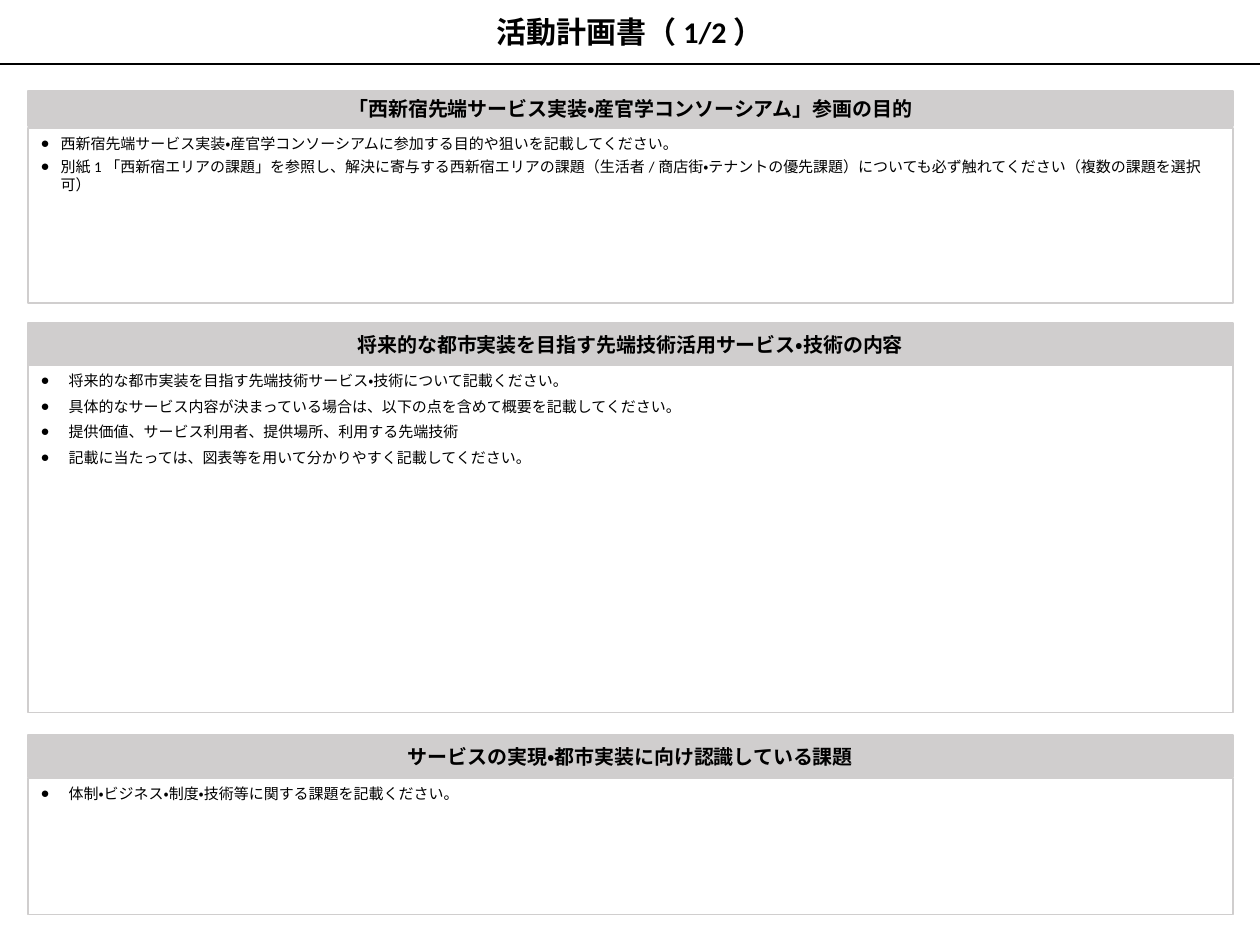
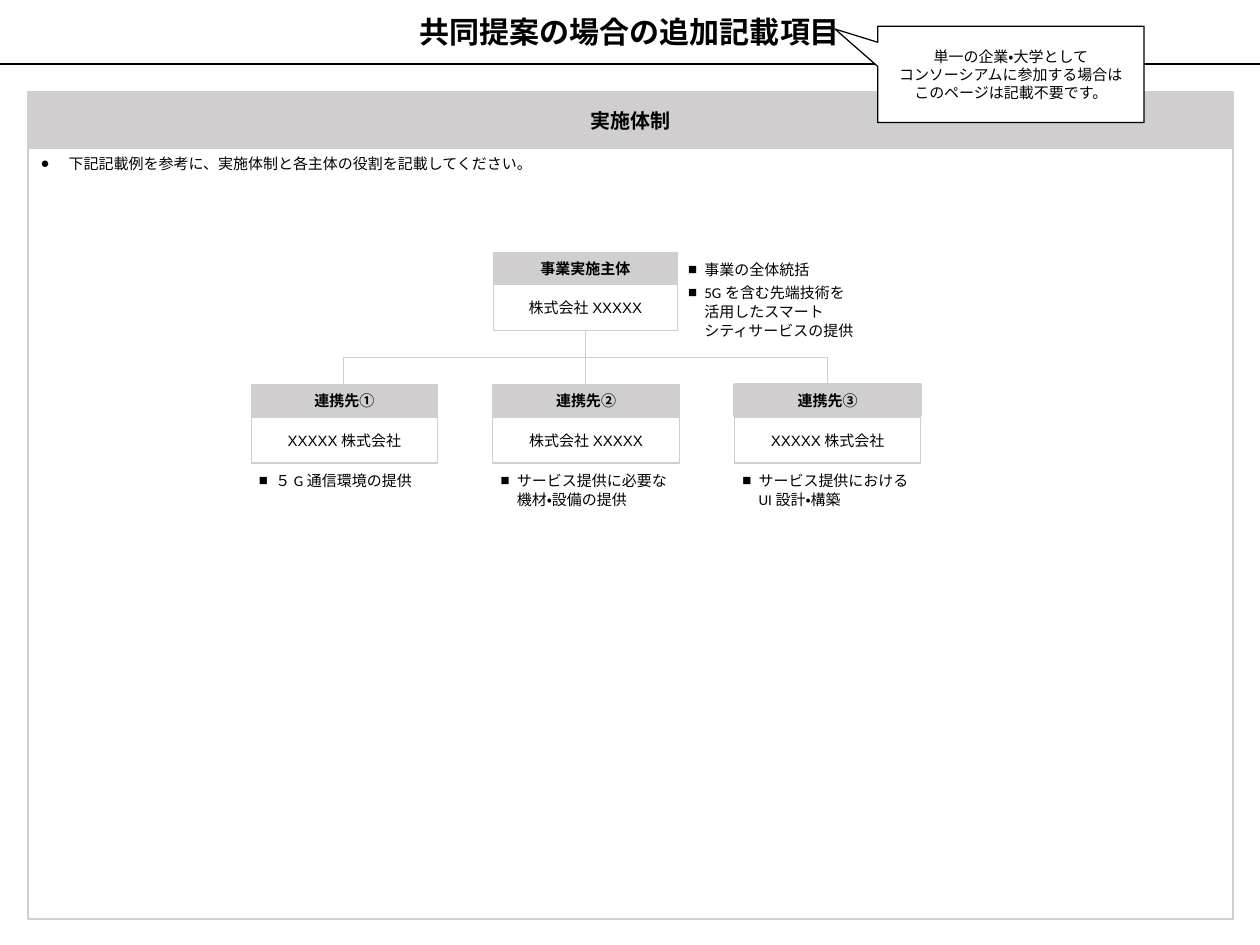
from lxml import etree
from pptx import Presentation
from pptx.dml.color import RGBColor
from pptx.enum.lang import MSO_LANGUAGE_ID
from pptx.enum.shapes import MSO_CONNECTOR, MSO_SHAPE
from pptx.enum.text import MSO_ANCHOR, PP_ALIGN
from pptx.oxml.ns import qn
from pptx.util import Cm, Pt

JAPANESE = MSO_LANGUAGE_ID.JAPANESE
STRAIGHT, ELBOW = MSO_CONNECTOR.STRAIGHT, MSO_CONNECTOR.ELBOW
RECT, CALLOUT = MSO_SHAPE.RECTANGLE, MSO_SHAPE.RECTANGULAR_CALLOUT
TOP, MIDDLE = MSO_ANCHOR.TOP, MSO_ANCHOR.MIDDLE
LEFT, CENTER = PP_ALIGN.LEFT, PP_ALIGN.CENTER

BLACK, WHITE, GRAY = "000000", "FFFFFF", "D0CECE"
SLIDE_W, SLIDE_H, TITLE_H = 35.56, 26.67, 1.8
PANEL_X, PANEL_W = 0.79, 34.01
PANEL_INSETS, BOX_INSETS, DEFAULT_INSETS = (0.36, 0.18), (0.2, 0.2), (0.25, 0.13)
TITLE_FONT = {"name": "Calibri", "size": Pt(24), "bold": True}
HEADING_FONT = {"name": "Calibri", "size": Pt(16), "bold": True}
BODY_FONT = {"name": "Calibri", "size": Pt(12), "bold": False}
ROLE_HEAD_FONT = {"name": "Arial", "size": Pt(12), "bold": True}

NARROW = {"char": "●", "left": 0.56, "hang": 0.56, "before": 4.3, "spacing": 1.0}
WIDE = {"char": "●", "left": 0.79, "hang": 0.79, "before": 6, "spacing": 1.0}
SQUARE = {"char": "■", "left": 0.48, "hang": 0.46, "before": 3, "spacing": 1.06}

PLAN_TITLE = "活動計画書（1/2）"
PLAN_PANELS = [
    {
        "heading": "「西新宿先端サービス実装・産官学コンソーシアム」参画の目的",
        "head": (2.57, 0.99), "body": (3.61, 4.95), "bullet": NARROW,
        "items": [
            "西新宿先端サービス実装・産官学コンソーシアムに参加する目的や狙いを記載してください。",
            "別紙1「西新宿エリアの課題」を参照し、解決に寄与する西新宿エリアの課題"
            "（生活者/商店街・テナントの優先課題）についても必ず触れてください（複数の課題を選択可）",
        ],
    },
    {
        "heading": "将来的な都市実装を目指す先端技術活用サービス・技術の内容",
        "head": (9.12, 1.19), "body": (10.31, 9.8), "bullet": WIDE,
        "items": [
            "将来的な都市実装を目指す先端技術サービス・技術について記載ください。",
            "具体的なサービス内容が決まっている場合は、以下の点を含めて概要を記載してください。",
            "提供価値、サービス利用者、提供場所、利用する先端技術",
            "記載に当たっては、図表等を用いて分かりやすく記載してください。",
        ],
    },
    {
        "heading": "サービスの実現・都市実装に向け認識している課題",
        "head": (20.75, 1.19), "body": (21.97, 3.84), "bullet": WIDE,
        "items": ["体制・ビジネス・制度・技術等に関する課題を記載ください。"],
    },
]

JOINT_TITLE = "共同提案の場合の追加記載項目"
JOINT_PANEL = {
    "heading": "実施体制",
    "head": (2.59, 1.6), "body": (4.19, 21.74), "bullet": WIDE,
    "items": ["下記記載例を参考に、実施体制と各主体の役割を記載してください。"],
}
CALLOUT_LINES = [
    "単一の企業・大学として",
    "コンソーシアムに参加する場合は",
    "このページは記載不要です。",
]
LEAD = {
    "role": "事業実施主体",
    "name": [("株式会社", "Calibri"), ("XXXXX", "Arial")],
    "tasks": ["事業の全体統括", "5Gを含む先端技術を\n活用したスマート\nシティサービスの提供"],
}
PARTNERS = [
    {"role": "連携先①", "name": [("XXXXX", "Arial"), ("株式会社", "Calibri")],
     "tasks": ["５G通信環境の提供"], "line": 1},
    {"role": "連携先②", "name": [("株式会社XXXXX", "Arial")],
     "tasks": ["サービス提供に必要な機材・設備の提供"], "line": 1},
    {"role": "連携先③", "name": [("XXXXX株式会社", "Arial")],
     "tasks": ["サービス提供におけるUI設計・構築"], "line": 2},
]
PARTNER_X, PARTNER_PITCH, PARTNER_Y, PARTNER_W = 7.09, 6.82, 10.85, 5.26
LEAD_X, LEAD_Y, LEAD_W = 13.92, 7.12, 5.21
ROLE_H, NAME_H, NAME_DROP, TASK_DROP = 0.89, 1.3, 0.92, 2.23


def rgb(color):
    """Turn a hex string into a colour."""
    return RGBColor.from_string(color)


def format_font(font, values):
    """Apply a dict of font values in black Japanese text."""
    for key, value in values.items():
        setattr(font, key, value)
    font.language_id = JAPANESE
    font.color.rgb = rgb(BLACK)


def add_bullet(p, bullet):
    """Give a paragraph a hanging bullet character."""
    pPr = p._p.get_or_add_pPr()
    pPr.set("marL", str(Cm(bullet["left"])))
    pPr.set("indent", str(-Cm(bullet["hang"])))
    etree.SubElement(pPr, qn("a:buFont")).set("typeface", "Arial")
    etree.SubElement(pPr, qn("a:buChar")).set("char", bullet["char"])
    p.line_spacing = bullet["spacing"]


def write(tf, items, font, insets, anchor=MIDDLE, align=CENTER, bullet=None):
    """Fill a text frame with paragraphs, each a string or a list of runs."""
    layout = {
        "word_wrap": True, "vertical_anchor": anchor,
        "margin_left": Cm(insets[0]), "margin_right": Cm(insets[0]),
        "margin_top": Cm(insets[1]), "margin_bottom": Cm(insets[1]),
    }
    for key, value in layout.items():
        setattr(tf, key, value)
    for i, item in enumerate(items):
        p = tf.add_paragraph() if i else tf.paragraphs[0]
        p.alignment = align
        if bullet:
            add_bullet(p, bullet)
            p.space_before = Pt(bullet["before"] if i else 0)
        if isinstance(item, str):
            p.text = item
            for r in p.runs:
                format_font(r.font, font)
        else:
            for text, name in item:
                r = p.add_run()
                r.text = text
                format_font(r.font, {**font, "name": name})
        for br in p._p.findall(qn("a:br")):
            etree.SubElement(br, qn("a:rPr")).set("sz", str(int(font["size"].pt * 100)))


def paint(sp, fill, line, width):
    """Set the fill and outline of a shape."""
    sp.fill.solid()
    sp.fill.fore_color.rgb = rgb(fill)
    sp.line.color.rgb = rgb(line)
    sp.line.width = Pt(width)


def add_box(s, box, fill, line=GRAY, width=1, kind=RECT):
    """Add a flat filled shape."""
    sp = s.shapes.add_shape(kind, *map(Cm, box))
    sp.shadow.inherit = False
    paint(sp, fill, line, width)
    return sp


def add_line(s, kind, points, color, width, rotation=0):
    """Add a connector without shadow, turned by whole degrees."""
    cxn = s.shapes.add_connector(kind, *map(Cm, points))
    cxn.line.color.rgb = rgb(color)
    cxn.line.width = Pt(width)
    spPr = cxn._element.spPr
    etree.SubElement(spPr, qn("a:effectLst"))
    if rotation:
        spPr.find(qn("a:xfrm")).set("rot", str(rotation * 60000))


def add_titled_slide(prs, title):
    """Add a slide with the title band and the rule below it."""
    s = prs.slides.add_slide(prs.slide_layouts[5])
    sp = s.shapes.title
    box = {"left": 0, "top": 0, "width": SLIDE_W, "height": TITLE_H}
    for key, value in box.items():
        setattr(sp, key, Cm(value))
    paint(sp, WHITE, WHITE, 1)
    write(sp.text_frame, [title], TITLE_FONT, DEFAULT_INSETS)
    add_line(s, STRAIGHT, (0, TITLE_H, SLIDE_W, TITLE_H), BLACK, 1.5)
    return s


def add_panel(s, panel):
    """Add a gray heading bar with a framed bullet area."""
    (head_y, head_h), (body_y, body_h) = panel["head"], panel["body"]
    body = add_box(s, (PANEL_X, body_y, PANEL_W, body_h), WHITE, width=1.5)
    write(body.text_frame, panel["items"], BODY_FONT, PANEL_INSETS, TOP, LEFT, panel["bullet"])
    head = add_box(s, (PANEL_X, head_y, PANEL_W, head_h), GRAY, width=1.5)
    write(head.text_frame, [panel["heading"]], HEADING_FONT, PANEL_INSETS)


def add_member(s, member, x, y, w, task_box):
    """Add a member's role, company name and task list."""
    role = add_box(s, (x, y, w, ROLE_H), GRAY, width=member.get("line", 1))
    write(role.text_frame, [member["role"]], ROLE_HEAD_FONT, BOX_INSETS)
    name = add_box(s, (x, y + NAME_DROP, w, NAME_H), WHITE)
    write(name.text_frame, [member["name"]], BODY_FONT, BOX_INSETS)
    tasks = s.shapes.add_textbox(*map(Cm, task_box))
    write(tasks.text_frame, member["tasks"], BODY_FONT, BOX_INSETS, TOP, LEFT, SQUARE)


def add_branches(s):
    """Join the lead box to the three partner boxes."""
    x, top = LEAD_X + LEAD_W / 2, LEAD_Y + NAME_DROP + NAME_H
    half_drop, half_span = (PARTNER_Y - top) / 2, PARTNER_PITCH / 2
    cy = top + half_drop
    for side, rotation in ((-1, 90), (1, 270)):
        cx, dx = x + side * half_span, side * half_drop
        points = (cx + dx, cy - half_span, cx - dx, cy + half_span)
        add_line(s, ELBOW, points, GRAY, 1, rotation)
    add_line(s, STRAIGHT, (x, PARTNER_Y, x, top), GRAY, 1)


def add_organisation(s):
    """Draw the lead member and its partners."""
    add_branches(s)
    for i, partner in enumerate(PARTNERS):
        x = PARTNER_X + i * PARTNER_PITCH
        task_box = (x, PARTNER_Y + TASK_DROP, PARTNER_W, 2.01)
        add_member(s, partner, x, PARTNER_Y, PARTNER_W, task_box)
    add_member(s, LEAD, LEAD_X, LEAD_Y, LEAD_W, (19.2, LEAD_Y, PARTNER_W, 2.21))


def main():
    """Build both slides and save them."""
    prs = Presentation()
    prs.slide_width, prs.slide_height = Cm(SLIDE_W), Cm(SLIDE_H)

    s = add_titled_slide(prs, PLAN_TITLE)
    for panel in PLAN_PANELS:
        add_panel(s, panel)

    s = add_titled_slide(prs, JOINT_TITLE)
    add_panel(s, JOINT_PANEL)
    callout = add_box(s, (24.77, 0.74, 7.52, 2.72), WHITE, BLACK, kind=CALLOUT)
    callout.adjustments[0], callout.adjustments[1] = -0.66, -0.47
    write(callout.text_frame, CALLOUT_LINES, BODY_FONT, DEFAULT_INSETS)
    add_organisation(s)

    prs.save("out.pptx")


if __name__ == "__main__":
    main()
